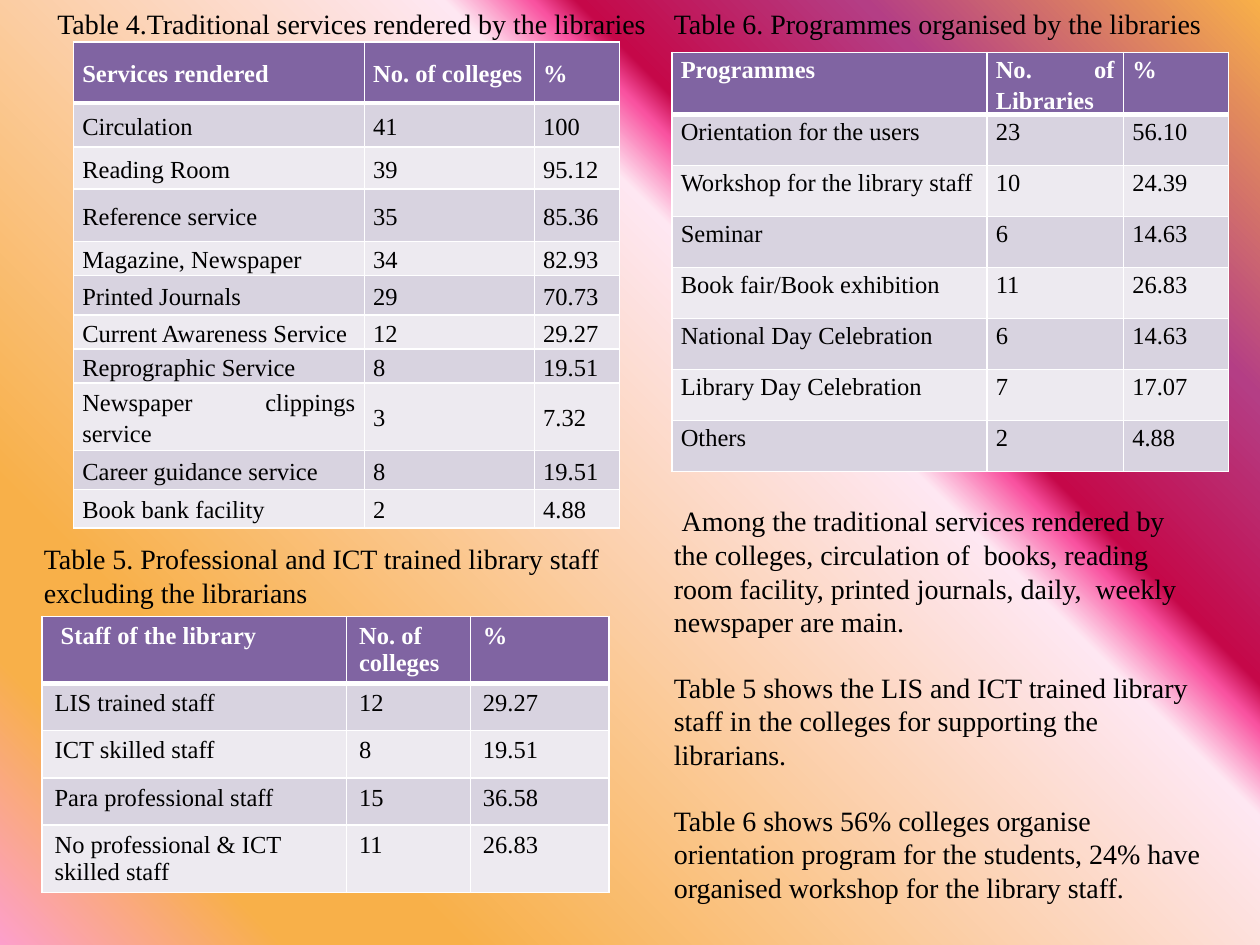
from dataclasses import dataclass

from lxml import etree
from pptx import Presentation
from pptx import util as u
from pptx.dml.color import RGBColor
from pptx.enum import text
from pptx.oxml.ns import qn


@dataclass(frozen=True)
class Theme:
    font: str = "Times New Roman"
    ink: str = "000000"
    white: str = "FFFFFF"
    header: str = "8064A2"
    bands: tuple = ("D8D3E0", "EDEAF0")
    backdrop: tuple = ((0, "FC9FCB"), (13, "F8B049"), (21, "F8B049"), (63, "FEE7F2"),
                       (67, "F952A0"), (69, "C50849"), (82, "B43E85"), (100, "F8B049"))
    body: int = 16
    cell: int = 14
    lead: int = 18
    gap: float = 18.4


def grid(n):
    """Length of n grid units, twelve to the inch (120 columns by 90 rows)."""
    return u.Inches(n / 12)


def add_color(parent, value):
    etree.SubElement(parent, qn("a:srgbClr"), val=value)


class Page:
    def __init__(self, prs, theme):
        self.theme = theme
        self.s = prs.slides.add_slide(prs.slide_layouts[6])

    def background(self):
        fill = self.s.background.fill
        fill.gradient()
        fill.gradient_angle = 45
        stops = next(self.s.element.iter(qn("a:gsLst")))
        for stop in list(stops):
            stops.remove(stop)
        for share, color in self.theme.backdrop:
            add_color(etree.SubElement(stops, qn("a:gs"), pos=str(share * 1000)), color)

    def style(self, p, size, color, bold=False):
        p.font.name, p.font.size, p.font.bold = self.theme.font, u.Pt(size), bold
        p.font.color.rgb = RGBColor.from_string(color)

    def text_box(self, box, paragraphs, align=text.PP_ALIGN.LEFT, wrap=True):
        sp = self.s.shapes.add_textbox(*map(grid, box))
        tf = sp.text_frame
        tf.word_wrap = wrap
        tf.auto_size = text.MSO_AUTO_SIZE.SHAPE_TO_FIT_TEXT
        for i, words in enumerate(paragraphs):
            p = tf.add_paragraph() if i else tf.paragraphs[0]
            p.text, p.alignment = words, align
            p.space_before = u.Pt(self.theme.gap if i else 0)
            self.style(p, self.theme.body, self.theme.ink)
        return tf

    def borders(self, cell, header):
        tcPr = cell._tc.get_or_add_tcPr()
        for i, side in enumerate(("lnL", "lnR", "lnT", "lnB")):
            width = 3 if header and side == "lnB" else 1
            ln = etree.Element(qn("a:" + side), w=str(int(u.Pt(width))))
            add_color(etree.SubElement(ln, qn("a:solidFill")), self.theme.white)
            tcPr.insert(i, ln)

    def table(self, left, top, cols, heights, rows, compact=True,
              justify_names=True, anchor=text.MSO_ANCHOR.TOP):
        """Compact tables have tight margins, justified text and wider leading."""
        t = self.theme
        table = self.s.shapes.add_table(len(rows), len(cols), grid(left), grid(top),
                                        grid(sum(cols)), grid(sum(heights))).table
        table.horz_banding = False
        for col, width in zip(table.columns, cols):
            col.width = grid(width)
        for r, (row, height) in enumerate(zip(rows, heights)):
            table.rows[r].height = grid(height)
            for c, words in enumerate(row):
                cell = table.cell(r, c)
                header = r == 0
                cell.fill.solid()
                cell.fill.fore_color.rgb = RGBColor.from_string(
                    t.header if header else t.bands[(r - 1) % 2])
                cell.vertical_anchor = anchor
                p = cell.text_frame.paragraphs[0]
                p.text = words
                self.style(p, t.cell, t.white if header else t.ink, header)
                if compact:
                    cell.margin_left = cell.margin_right = u.Inches(0.07)
                    cell.margin_top = cell.margin_bottom = 0
                    p.line_spacing = 1.15
                    if header or c or justify_names:
                        p.alignment = text.PP_ALIGN.JUSTIFY
                self.borders(cell, header)


SERVICES = [
    ("Services rendered", "No. of colleges", "%"),
    ("Circulation", "41", "100"),
    ("Reading Room", "39", "95.12"),
    ("Reference service", "35", "85.36"),
    ("Magazine, Newspaper", "34", "82.93"),
    ("Printed Journals", "29", "70.73"),
    ("Current Awareness Service", "12", "29.27"),
    ("Reprographic Service", "8", "19.51"),
    ("Newspaper clippings service", "3", "7.32"),
    ("Career guidance service", "8", "19.51"),
    ("Book bank facility", "2", "4.88"),
]
STAFF = [
    (" Staff of the library", "No. of colleges", "%"),
    ("LIS trained staff", "12", "29.27"),
    ("ICT skilled staff", "8", "19.51"),
    ("Para professional staff", "15", "36.58"),
    ("No professional & ICT skilled staff", "11", "26.83"),
]
PROGRAMMES = [
    ("Programmes", "No. of Libraries", "%"),
    ("Orientation for the users", "23", "56.10"),
    ("Workshop for the library staff", "10", "24.39"),
    ("Seminar", "6", "14.63"),
    ("Book fair/Book exhibition", "11", "26.83"),
    ("National Day Celebration", "6", "14.63"),
    ("Library Day Celebration", "7", "17.07"),
    ("Others", "2", "4.88"),
]
FINDINGS = [
    "Among the traditional services rendered by the colleges, circulation of  books, "
    "reading room facility, printed journals, daily,  weekly newspaper are main.",
    "Table 5 shows the LIS and ICT trained library staff in the colleges for "
    "supporting the librarians.",
    "Table 6 shows 56% colleges organise orientation program for the students, "
    "24% have organised workshop for the library staff.",
]


def main():
    prs = Presentation()
    prs.slide_width, prs.slide_height = grid(120), grid(90)
    page = Page(prs, Theme())
    page.background()

    # Staff and programme tables
    page.table(4, 58.7, (29, 11.8, 13.2), (6.4, 4.5, 4.5, 4.5, 6.4), STAFF, compact=False)
    page.table(64, 5, (30, 13, 10), [5.8] + [4.86] * 7, PROGRAMMES, justify_names=False)

    # Their captions
    page.text_box((63, 0, 53.4, 4.4), ["Table 6. Programmes organised by the libraries"],
                  wrap=False)
    page.text_box((3, 51, 59, 7.7), ["Table 5. Professional and ICT trained library staff "
                                     "excluding the librarians"])

    # Services table and caption
    page.table(7, 4, (27.7, 16.2, 8.1), (5.8, 4.2, 4, 5, 3.2, 3.8, 3.2, 3.2, 6.4, 3.7, 3.7),
               SERVICES, anchor=text.MSO_ANCHOR.MIDDLE)
    page.text_box((2, 0, 63, 4.4), ["Table 4.Traditional services rendered by the libraries"],
                  align=text.PP_ALIGN.CENTER)

    # Findings, the first one indented by a larger space
    tf = page.text_box((63, 47, 53, 40.4), [" "] + FINDINGS[1:])
    p = tf.paragraphs[0]
    p.runs[0].font.size = u.Pt(page.theme.lead)
    p.add_run().text = FINDINGS[0]

    prs.save("out.pptx")


if __name__ == "__main__":
    main()
